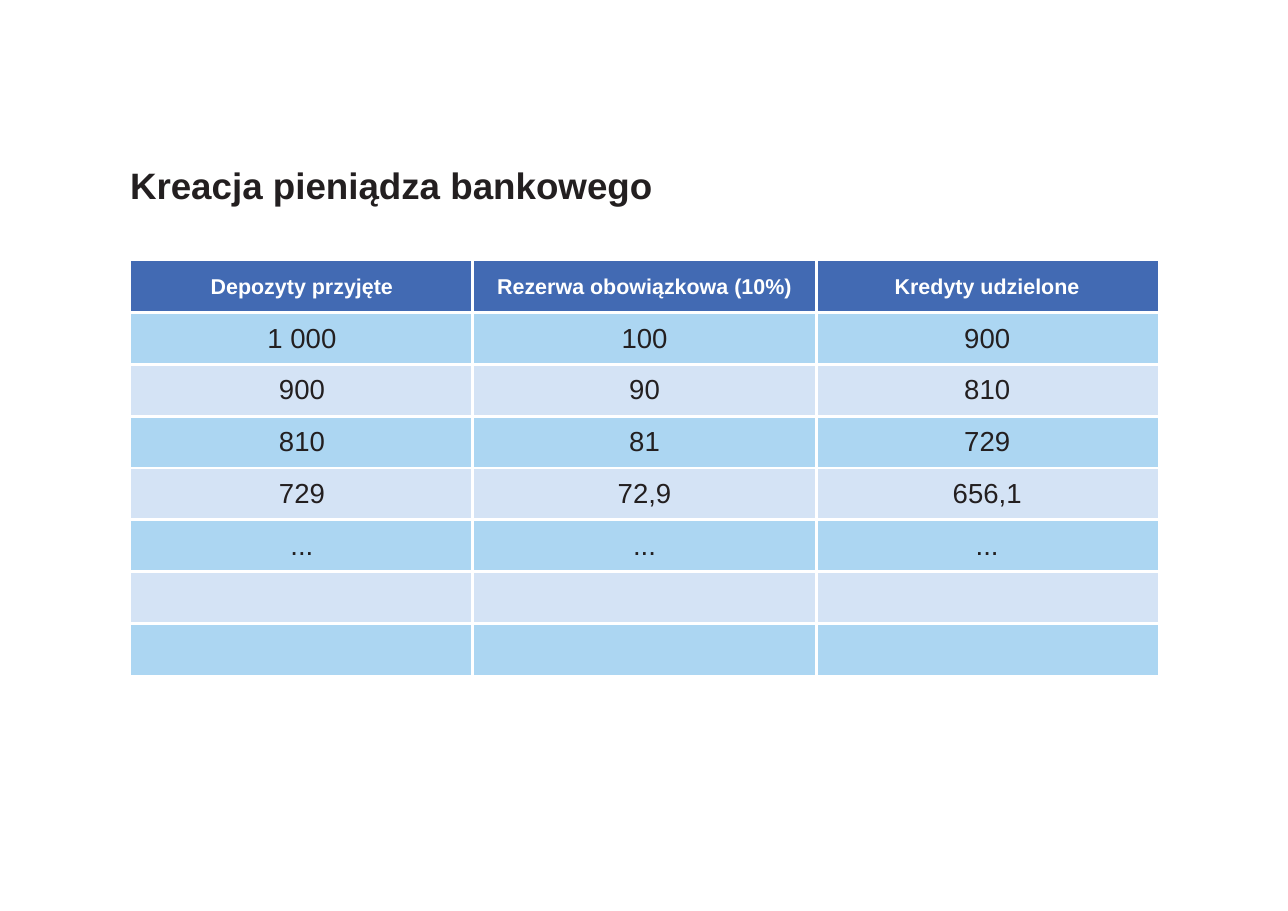
from lxml import etree
from pptx import Presentation
from pptx.dml.color import RGBColor
from pptx.enum.text import MSO_ANCHOR, PP_ALIGN
from pptx.oxml.ns import qn
from pptx.util import Inches, Pt

LEFT, CENTER = PP_ALIGN.LEFT, PP_ALIGN.CENTER
MIDDLE = MSO_ANCHOR.MIDDLE

TITLE = "Kreacja pieniądza bankowego"
HEADER = ("Depozyty przyjęte", "Rezerwa obowiązkowa (10%)", "Kredyty udzielone")
ROWS = [
    ("1 000", "100", "900"),
    ("900", "90", "810"),
    ("810", "81", "729"),
    ("729", "72,9", "656,1"),
    ("...", "...", "..."),
    ("", "", ""),
    ("", "", ""),
]
COLUMN_WIDTHS = (3.1, 3.12, 3.1)
ROW_HEIGHT = 0.47
TABLE_LEFT, TABLE_TOP = 1.19, 2.37

FONT = "Arial"
INK, WHITE, HEADER_BLUE = "231F20", "FFFFFF", "426AB3"
BANDS = ("ACD6F2", "D4E3F5")


def color(value):
    return RGBColor.from_string(value)


def write(frame, text, size=18, ink=INK, bold=False, align=CENTER):
    paragraph = frame.paragraphs[0]
    paragraph.alignment = align
    paragraph.text = text
    font = paragraph.font
    font.name, font.size, font.bold = FONT, Pt(size), bold
    font.color.rgb = color(ink)


def clear_margins(item):
    item.margin_left = item.margin_right = item.margin_top = item.margin_bottom = 0


def set_borders(cell, inner_sides):
    """Draw white rules on the inner sides and no line on the others."""
    properties = cell._tc.get_or_add_tcPr()
    for position, side in enumerate("LRTB"):
        line = etree.Element(qn(f"a:ln{side}"), w=str(Pt(2)))
        if side in inner_sides:
            fill = etree.SubElement(line, qn("a:solidFill"))
            etree.SubElement(fill, qn("a:srgbClr"), val=WHITE)
        else:
            etree.SubElement(line, qn("a:noFill"))
        properties.insert(position, line)


def add_title(slide):
    box = slide.shapes.add_textbox(Inches(1.18), Inches(1.48), Inches(9.35), Inches(0.41))
    frame = box.text_frame
    frame.word_wrap = True
    clear_margins(frame)
    write(frame, TITLE, size=24, bold=True, align=LEFT)


def add_deposit_table(slide):
    rows = [HEADER, *ROWS]
    last_row, last_column = len(rows) - 1, len(HEADER) - 1
    table = slide.shapes.add_table(
        len(rows), len(HEADER), Inches(TABLE_LEFT), Inches(TABLE_TOP),
        Inches(sum(COLUMN_WIDTHS)), Inches(ROW_HEIGHT * len(rows))).table
    table.horz_banding = False
    for column, width in zip(table.columns, COLUMN_WIDTHS):
        column.width = Inches(width)
    for row_index, values in enumerate(rows):
        table.rows[row_index].height = Inches(ROW_HEIGHT)
        is_header = row_index == 0
        for column_index, text in enumerate(values):
            cell = table.cell(row_index, column_index)
            clear_margins(cell)
            cell.vertical_anchor = MIDDLE
            cell.fill.solid()
            cell.fill.fore_color.rgb = color(
                HEADER_BLUE if is_header else BANDS[(row_index - 1) % 2])
            inner = {"L": column_index > 0, "R": column_index < last_column,
                     "T": row_index > 0, "B": row_index < last_row}
            set_borders(cell, [side for side, shown in inner.items() if shown])
            if is_header:
                write(cell.text_frame, text, size=14, ink=WHITE, bold=True)
            elif text:
                write(cell.text_frame, text)


def main():
    presentation = Presentation()
    presentation.slide_width, presentation.slide_height = Inches(11.69), Inches(8.27)
    slide = presentation.slides.add_slide(presentation.slide_layouts[6])
    add_title(slide)
    add_deposit_table(slide)
    presentation.save("out.pptx")


if __name__ == "__main__":
    main()
